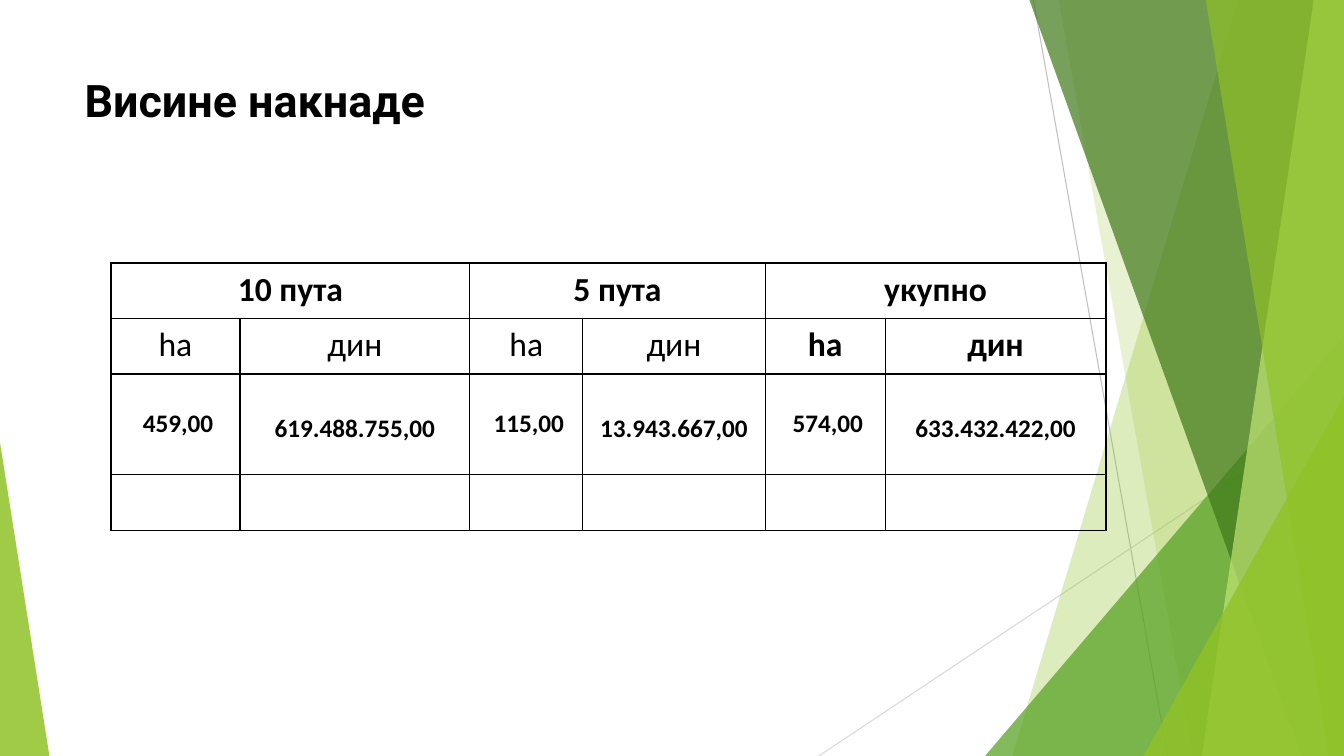
from lxml import etree
from pptx import Presentation
from pptx import util as u
from pptx.dml.color import RGBColor
from pptx.enum import shapes, text
from pptx.oxml.ns import qn

BLACK = RGBColor(0x00, 0x00, 0x00)
LIME = RGBColor(0x90, 0xC2, 0x26)
GREEN = RGBColor(0x54, 0xA0, 0x21)
FOREST = RGBColor(0x3F, 0x78, 0x19)
PALE_LIME = RGBColor(0xC0, 0xE4, 0x74)
GREY = RGBColor(0xBF, 0xBF, 0xBF)
LIGHT_GREY = RGBColor(0xD9, 0xD9, 0xD9)

WIDTH, HEIGHT = 13.33, 7.5
COLUMNS = [1.28, 2.28, 1.12, 1.81, 1.19, 2.19]
ROWS = [0.55, 0.55, 1.0, 0.55]
GROUPS = ["10 пута", "5 пута", "укупно"]
UNITS = ["ha", "дин"] * 3
AMOUNTS = ["459,00", "619.488.755,00", "115,00", "13.943.667,00", "574,00", "633.432.422,00"]


def paint(facet, colour, opacity):
    """Give a facet a see-through fill without line or shadow."""
    facet.shadow.inherit = False
    facet.line.fill.background()
    facet.fill.solid()
    facet.fill.fore_color.rgb = colour
    tint = facet.fill._xPr.find(qn("a:solidFill"))[0]
    etree.SubElement(tint, qn("a:alpha")).set("val", str(opacity * 1000))


def add_ray(slide, start, end, colour):
    """Draw one thin background line."""
    ends = [u.Inches(value) for value in (*start, *end)]
    ray = slide.shapes.add_connector(shapes.MSO_CONNECTOR.STRAIGHT, *ends)
    ray.line.color.rgb = colour
    ray.line.width = u.Pt(0.75)
    etree.SubElement(ray._element.spPr, qn("a:effectLst"))


def add_band(slide, right, height, top_x, bottom_x, colour, opacity):
    """Draw a full-height band between a slanted edge and the right margin."""
    outline = slide.shapes.build_freeform(u.Inches(top_x), 0)
    corners = [(right, 0), (right, height), (bottom_x, height)]
    outline.add_line_segments([(u.Inches(x), u.Inches(y)) for x, y in corners])
    paint(outline.convert_to_shape(), colour, opacity)


def add_wedge(slide, bottom, left, width, height, peak, colour, opacity):
    """Draw a triangle standing on the bottom edge."""
    box = [u.Inches(value) for value in (left, bottom - height, width, height)]
    wedge = slide.shapes.add_shape(shapes.MSO_SHAPE.ISOSCELES_TRIANGLE, *box)
    wedge.adjustments[0] = peak
    paint(wedge, colour, opacity)


def add_backdrop(slide, width, height):
    """Draw the green facets along the slide edges."""
    add_ray(slide, (10.25, 0), (11.58, height), GREY)
    add_ray(slide, (width, 4.03), (8.12, height), LIGHT_GREY)
    add_band(slide, width, height, 12.28, 10.04, LIME, 30)
    add_band(slide, width, height, 10.5, 11.83, LIME, 20)
    add_wedge(slide, height, width - 3.56, 3.56, 4.17, 1, GREEN, 72)
    add_band(slide, width, height, 10.21, 12.91, FOREST, 70)
    add_band(slide, width, height, 13.03, 11.92, PALE_LIME, 70)
    add_band(slide, width, height, 11.96, 13.18, LIME, 65)
    add_wedge(slide, height, width - 1.99, 1.99, 3.57, 1, LIME, 80)
    add_wedge(slide, height, 0, 0.49, 3.11, 0, LIME, 85)


def style_run(paragraph, font_name, size, bold):
    """Format the single run of a paragraph."""
    font = paragraph.runs[0].font
    font.name, font.size, font.bold = font_name, u.Pt(size), bold
    font.color.rgb = BLACK


def add_heading(slide, left, top, width, height):
    """Place the slide heading."""
    heading = slide.shapes.add_textbox(*[u.Inches(v) for v in (left, top, width, height)])
    heading.text_frame.word_wrap = True
    heading.text_frame.text = "Висине накнаде"
    style_run(heading.text_frame.paragraphs[0], "Roboto", 32, True)


def frame_cell(cell):
    """Clear the cell fill and rule all four sides."""
    cell.fill.background()
    properties = cell._tc.get_or_add_tcPr()
    for position, side in enumerate(("a:lnL", "a:lnR", "a:lnT", "a:lnB")):
        rule = etree.Element(qn(side), w=str(u.Pt(1)))
        solid = etree.SubElement(rule, qn("a:solidFill"))
        etree.SubElement(solid, qn("a:srgbClr")).set("val", str(BLACK))
        properties.insert(position, rule)


def fill_cell(cell, words, size, bold, left=0.07, top=0.0):
    """Write one centred entry of the table."""
    cell.margin_left, cell.margin_right = u.Inches(left), u.Inches(0.07)
    cell.margin_top, cell.margin_bottom = u.Inches(top), 0
    cell.text_frame.text = words
    entry = cell.text_frame.paragraphs[0]
    entry.alignment = text.PP_ALIGN.CENTER
    entry.line_spacing = 1.15
    style_run(entry, "Calibri", size, bold)


def add_fee_table(slide, left, top):
    """Build the table of areas and amounts."""
    box = [u.Inches(v) for v in (left, top, sum(COLUMNS), sum(ROWS))]
    fees = slide.shapes.add_table(len(ROWS), len(COLUMNS), *box).table
    fees.first_row = fees.horz_banding = False
    for column, width in zip(fees.columns, COLUMNS):
        column.width = u.Inches(width)
    for row, height in zip(fees.rows, ROWS):
        row.height = u.Inches(height)
    for cell in fees.iter_cells():
        frame_cell(cell)
    for index, group in enumerate(GROUPS):
        first = fees.cell(0, 2 * index)
        first.merge(fees.cell(0, 2 * index + 1))
        fill_cell(first, group, 24, True)
    for index, (unit, amount) in enumerate(zip(UNITS, AMOUNTS)):
        fill_cell(fees.cell(1, index), unit, 24, index >= 4)
        left_inset, top_inset = (0.07, 0.35) if index % 2 else (0.12, 0.3)
        fill_cell(fees.cell(2, index), amount, 18, True, left_inset, top_inset)


def main():
    """Build and save the slide."""
    deck = Presentation()
    deck.slide_width, deck.slide_height = u.Inches(WIDTH), u.Inches(HEIGHT)
    slide = deck.slides.add_slide(deck.slide_layouts[6])
    add_backdrop(slide, WIDTH, HEIGHT)
    add_heading(slide, 0.74, 0.67, 9.4, 1.44)
    add_fee_table(slide, 1.1, 2.61)
    deck.save("out.pptx")


if __name__ == "__main__":
    main()
